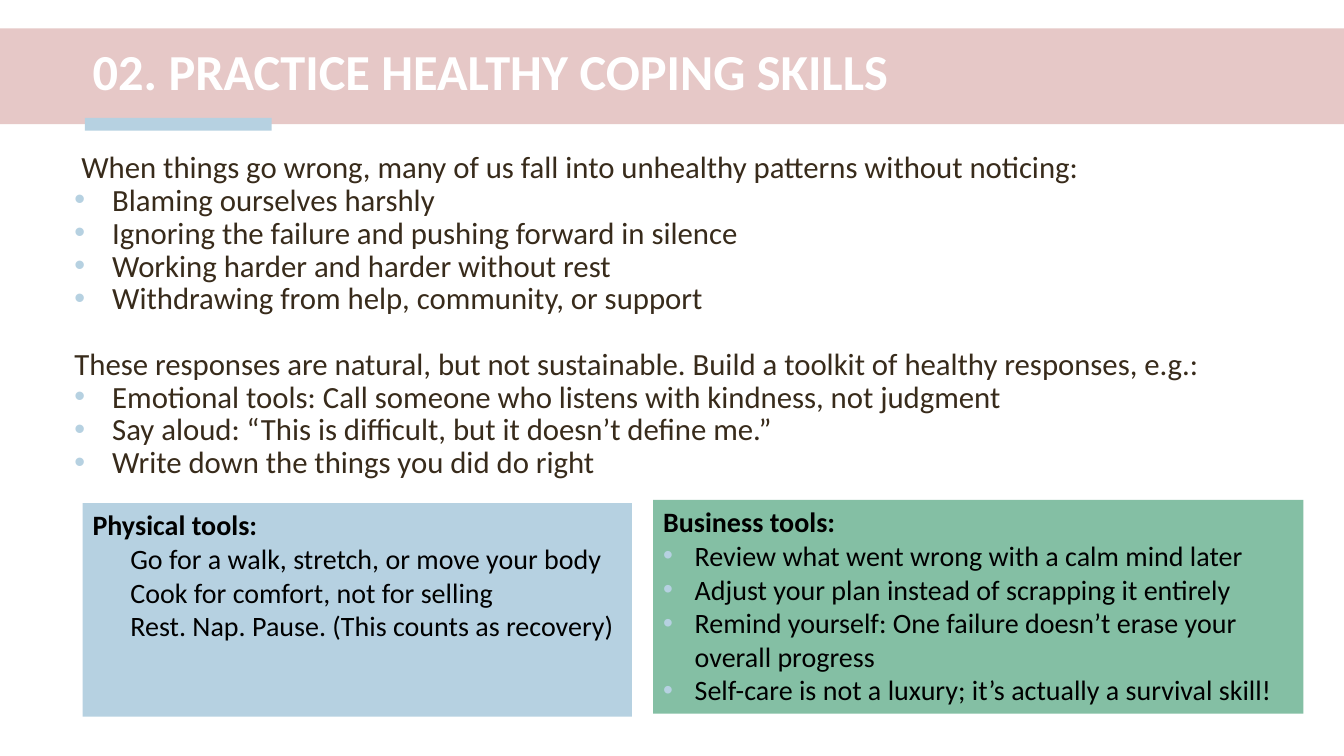
import pptx
import pptx.util
import pptx.dml.color
import pptx.enum.shapes
import pptx.enum.text
import pptx.oxml
import pptx.oxml.ns

Pt = pptx.util.Pt
HUES = {"pink": "E6C8C7", "blue": "B6D1E1", "green": "84BFA4",
        "white": "FFFFFF", "brown": "382B1B", "black": "000000"}


def tint(name):
    return pptx.dml.color.RGBColor.from_string(HUES[name])


def apply(item, values):
    for key, value in values.items():
        setattr(item, key, value)


class Page:
    face = "Calibri"

    def __init__(self, slide):
        self.slide = slide

    def rect(self, box, hue):
        kind = pptx.enum.shapes.MSO_SHAPE.RECTANGLE
        shape = self.slide.shapes.add_shape(kind, *map(Pt, box))
        shape.shadow.inherit = False
        shape.fill.solid()
        shape.fill.fore_color.rgb = tint(hue)
        shape.line.fill.background()
        return shape

    def frame(self, shape, anchor):
        apply(shape.text_frame, {
            "word_wrap": True, "vertical_anchor": anchor,
            "auto_size": pptx.enum.text.MSO_AUTO_SIZE.NONE})
        return shape.text_frame

    def words(self, para, text, size, hue, bold=False, **form):
        run = para.add_run()
        run.text = text
        apply(run.font, {"name": self.face, "size": Pt(size), "bold": bold})
        run.font.color.rgb = tint(hue)
        apply(para, {"alignment": pptx.enum.text.PP_ALIGN.LEFT, **form})

    def indent(self, para, left, bullet=False):
        """Indent a paragraph, hanging a blue bullet in the margin if asked."""
        props = para._p.get_or_add_pPr()
        props.set("marL", str(Pt(left)))
        if bullet:
            props.set("indent", str(-Pt(left)))
            space = pptx.oxml.ns.nsdecls("a")
            for part in (
                    f'<a:buClr {space}><a:srgbClr val="{HUES["blue"]}"/></a:buClr>',
                    f'<a:buFont {space} typeface="Arial"/>',
                    f'<a:buChar {space} char="•"/>'):
                props.append(pptx.oxml.parse_xml(part))

    def title(self, box, text):
        shape = self.slide.shapes.title
        apply(shape, dict(zip(("left", "top", "width", "height"), map(Pt, box))))
        frame = self.frame(shape, pptx.enum.text.MSO_ANCHOR.MIDDLE)
        self.words(frame.paragraphs[0], text, 36, "white", True, line_spacing=0.9)
        # Bring the title in front of the band.
        tree = shape._element.getparent()
        tree.append(shape._element)

    def lists(self, shape, groups, size, hue, left, bold=False, gap=0, **form):
        """Fill a shape with (heading, items) groups, with a gap between them."""
        frame = self.frame(shape, pptx.enum.text.MSO_ANCHOR.TOP)
        para = frame.paragraphs[0]
        for spot, (head, items) in enumerate(groups):
            if spot:
                para = frame.add_paragraph()
                para.space_before = Pt(gap)
            self.words(para, head, size, hue, bold, **form)
            for item in items:
                para = frame.add_paragraph()
                self.words(para, item, size, hue, **form)
                self.indent(para, left, True)
        return frame


HABITS = [
    ("When things go wrong, many of us fall into unhealthy patterns without noticing:", [
        "Blaming ourselves harshly",
        "Ignoring the failure and pushing forward in silence",
        "Working harder and harder without rest",
        "Withdrawing from help, community, or support"]),
    ("These responses are natural, but not sustainable. "
     "Build a toolkit of healthy responses, e.g.:", [
         "Emotional tools: Call someone who listens with kindness, not judgment",
         "Say aloud: “This is difficult, but it doesn’t define me.”",
         "Write down the things you did do right"])]

TOOLS = [
    ((59, 359.3, 392.4, 152.6), "blue", 27, "Physical tools:", [
        "Go for a walk, stretch, or move your body",
        "Cook for comfort, not for selling",
        "Rest. Nap. Pause. (This counts as recovery)"]),
    ((466.6, 357.1, 464.4, 152.6), "green", 22.5, "Business tools:", [
        "Review what went wrong with a calm mind later",
        "Adjust your plan instead of scrapping it entirely",
        "Remind yourself: One failure doesn’t erase your overall progress",
        "Self-care is not a luxury; it’s actually a survival skill!"])]


def main():
    deck = pptx.Presentation()
    apply(deck, {"slide_width": Pt(960), "slide_height": Pt(540)})
    page = Page(deck.slides.add_slide(deck.slide_layouts[5]))

    page.rect((0, 20.2, 960, 68.4), "pink")
    page.rect((60.7, 84.3, 133.4, 9), "blue")
    page.title((59, 24.5, 859, 56.9), "02. PRACTICE HEALTHY COPING SKILLS")

    body = page.slide.shapes.add_textbox(*map(Pt, (46.1, 105.1, 895, 329.8)))
    frame = page.lists(body, HABITS, 22, "brown", 27, gap=23.4,
                       line_spacing=Pt(23.4))
    page.indent(frame.paragraphs[0], 5)

    for box, hue, left, head, items in TOOLS:
        page.lists(page.rect(box, hue), [(head, items)], 20, "black", left, True)

    deck.save("out.pptx")


if __name__ == "__main__":
    main()
